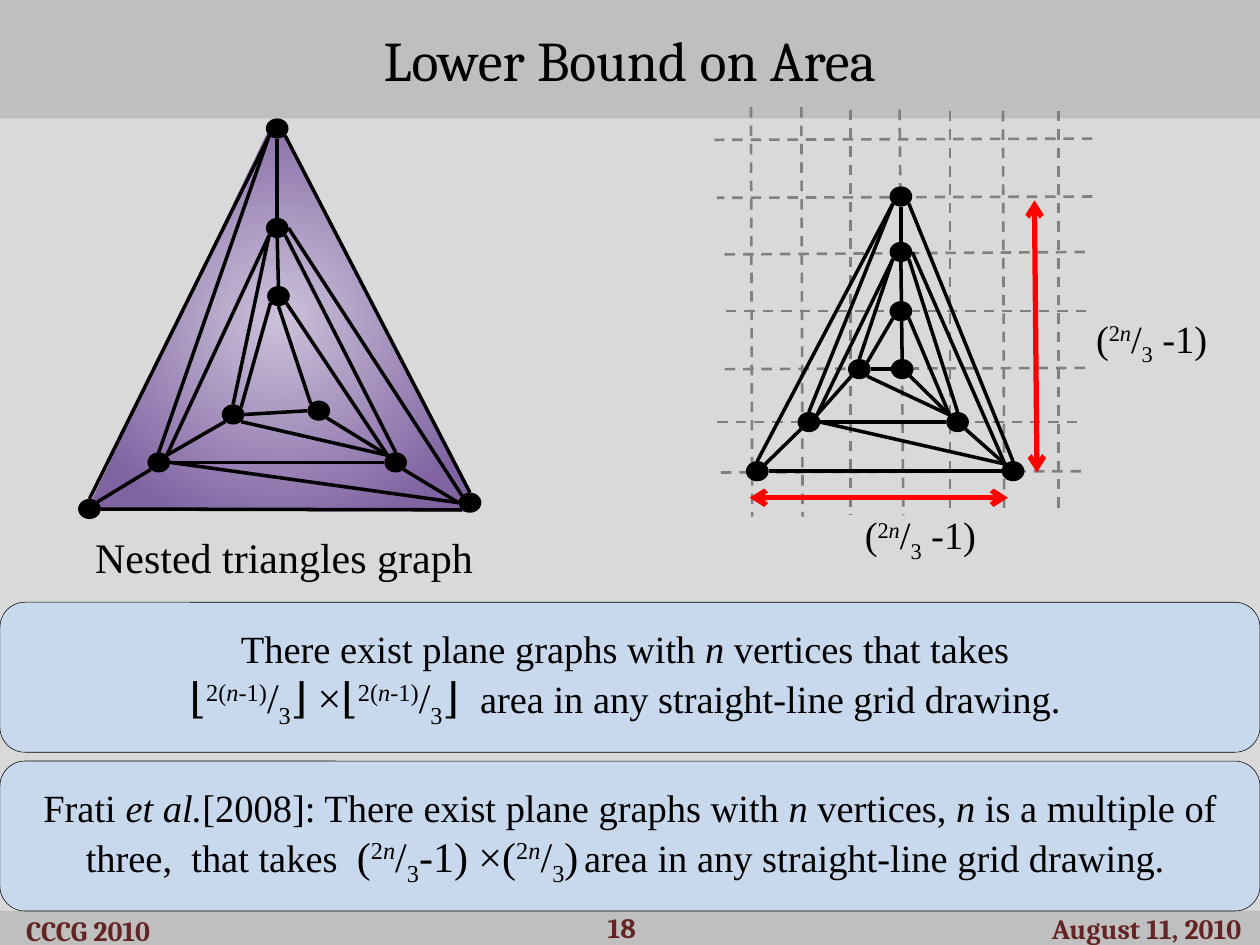
from math import cos, radians, sin
from typing import NamedTuple

from lxml import etree
from pptx import Presentation
from pptx.dml.color import RGBColor
from pptx.enum.dml import MSO_LINE as Dash
from pptx.enum.shapes import MSO_CONNECTOR as Connector, MSO_SHAPE as Preset
from pptx.enum.text import MSO_ANCHOR as Anchor, PP_ALIGN as Align
from pptx.oxml.ns import qn
from pptx.util import Inches, Pt

BLACK = RGBColor(0x00, 0x00, 0x00)
BACKDROP = RGBColor(0xD9, 0xD9, 0xD9)
BAND = RGBColor(0xBF, 0xBF, 0xBF)
GRID_GRAY = RGBColor(0x80, 0x80, 0x80)
RED = RGBColor(0xFF, 0x00, 0x00)
MAROON = RGBColor(0x63, 0x25, 0x23)
PALE_BLUE = RGBColor(0xC6, 0xD9, 0xF1)
LILAC = RGBColor(0xCC, 0xC1, 0xDA)
PURPLE = RGBColor(0x80, 0x64, 0xA2)
HEADING, BODY = "Cambria", "Times New Roman"

NODE_WIDTH, NODE_HEIGHT = 0.18, 0.16
SITE_ANGLES = {"R": 0, "BR": 45, "B": 90, "BL": 135,
               "L": 180, "TL": 225, "T": 270, "TR": 315}
SHARED_EDGES = """E.BL-B.TR B.T-A.BL C.T-A.BR A.BL-E.T D.BL-E.TR A.B-D.T
    D.R-C.TL D.BR-F.T E.R-F.L H.BL-E.TR F.TL-H.BR D.BL-H.T G.BL-H.TR
    G.BR-F.TL H.R-I.L I.BR-F.TL"""
NESTED_EDGES = "B.R-C.BL E.R-C.L C.L-F.BR D.B-G.T G.B-I.TL"
GRID_EDGES = "B.R-C.L E.R-C.TL C.TL-F.BR D.B-I.T"
NESTED_NODES = {
    "A": (1.58, 0.08), "B": (0.09, 3.1), "C": (3.11, 3.05),
    "D": (1.58, 0.87), "E": (0.64, 2.73), "F": (2.52, 2.73),
    "G": (1.59, 1.41), "H": (1.23, 2.35), "I": (1.91, 2.32)}
GRID_NODES = {
    "A": (1.49, 0.71), "B": (0.35, 2.89), "C": (2.38, 2.89),
    "D": (1.49, 1.15), "E": (0.76, 2.5), "F": (1.94, 2.5),
    "G": (1.49, 1.62), "H": (1.16, 2.08), "I": (1.5, 2.08)}
NESTED_OUTLINE = [(0.07, 3.11), (1.52, 0.08), (1.61, 0.04), (1.63, 0.12),
                  (3.14, 3.03), (3.13, 3.09), (3.1, 3.12)]
GRID_COLUMNS = [(0.3, 0.31, 0, 3.25), (0.7, 0.71, 0, 3.25),
                (1.09, 1.09, 0.02, 3.24), (1.48, 1.51, 0.02, 3.24),
                (1.88, 1.88, 0.03, 3.2), (2.3, 2.31, 0.03, 3.22),
                (2.74, 2.74, 0.03, 3.2)]
GRID_ROWS = [(3.01, 0.01, 0.25, 0.26), (3.01, 0.03, 0.71, 0.72),
             (2.95, 0.05, 1.15, 1.17), (2.96, 0.07, 1.62, 1.62),
             (2.95, 0.04, 2.07, 2.08), (2.89, 0, 2.5, 2.5),
             (2.92, 0, 2.89, 2.9)]

TWO_N_THIRDS = [("2", "^"), ("n", "^i"), ("/", ""), ("3", "_")]
TWO_N_LESS_THIRDS = [("2(", "^"), ("n", "^i"), ("-1)", "^"), ("/", ""), ("3", "_")]
SIDE_LENGTH = [("(", ""), *TWO_N_THIRDS, (" -1)", "")]
FLOOR_AREA = [("⌊", ""), *TWO_N_LESS_THIRDS, ("⌋ ×⌊", ""),
              *TWO_N_LESS_THIRDS, ("⌋  ", "")]
FRATI_AREA = [("(", ""), *TWO_N_THIRDS, ("-1) ×(", ""), *TWO_N_THIRDS, (")", "")]
CLOSING = ("area in any straight-line grid drawing. ", "")


class Box(NamedTuple):
    """Region of the slide, in inches."""
    left: float
    top: float
    width: float
    height: float

    def point(self, x, y):
        """Return the slide position of an offset inside the region."""
        return Inches(self.left + x), Inches(self.top + y)

    def inner(self, x, y, width, height):
        """Return a smaller region at an offset inside this one."""
        return Box(self.left + x, self.top + y, width, height)

    def lengths(self):
        """Return left, top, width and height as lengths."""
        return [Inches(value) for value in self]


def enlarged(runs, size=24):
    """Give every run of a formula its own size."""
    return [(text, marks, size) for text, marks in runs]


def write(frame, paragraphs, size=22, font=BODY, color=BLACK, bold=False):
    """Fill a text frame with centred paragraphs of marked runs."""
    frame.word_wrap = True
    frame.vertical_anchor = Anchor.MIDDLE
    for number, runs in enumerate(paragraphs):
        paragraph = frame.add_paragraph() if number else frame.paragraphs[0]
        paragraph.alignment = Align.CENTER
        for text, marks, *own_size in runs:
            run = paragraph.add_run()
            run.text = text
            run.font.name, run.font.bold = font, bold
            run.font.size = Pt(own_size[0] if own_size else size)
            run.font.color.rgb = color
            run.font.italic = "i" in marks
            if "^" in marks or "_" in marks:
                baseline = "30000" if "^" in marks else "-25000"
                run._r.get_or_add_rPr().set("baseline", baseline)


def add_label(shapes, box, runs, **style):
    """Place a plain text label."""
    write(shapes.add_textbox(*box.lengths()).text_frame, [runs], **style)


def add_filled(shapes, preset, box, color):
    """Place a flat preset shape without outline."""
    shape = shapes.add_shape(preset, *box.lengths())
    shape.shadow.inherit = False
    shape.fill.solid()
    shape.fill.fore_color.rgb = color
    shape.line.fill.background()
    return shape


def add_line(shapes, start, end, color=BLACK, width=2, dash=None, arrows=False):
    """Draw a straight connector, dashed or double-headed on request."""
    line = shapes.add_connector(Connector.STRAIGHT, *start, *end)
    line.line.color.rgb = color
    line.line.width = Pt(width)
    if dash:
        line.line.dash_style = dash
    properties = line._element.spPr
    if arrows:
        for end_tag in ("a:headEnd", "a:tailEnd"):
            etree.SubElement(properties.find(qn("a:ln")), qn(end_tag), type="arrow")
    etree.SubElement(properties, qn("a:effectLst"))


def add_graph(shapes, box, nodes, edges):
    """Draw vertices and the edges that join sites on their rims."""
    for x, y in nodes.values():
        node = box.inner(x - NODE_WIDTH / 2, y - NODE_HEIGHT / 2, NODE_WIDTH, NODE_HEIGHT)
        add_filled(shapes, Preset.OVAL, node, BLACK)

    def rim(site):
        name, side = site.split(".")
        x, y = nodes[name]
        angle = radians(SITE_ANGLES[side])
        return box.point(x + NODE_WIDTH / 2 * cos(angle), y + NODE_HEIGHT / 2 * sin(angle))

    for edge in edges.split():
        start, end = edge.split("-")
        add_line(shapes, rim(start), rim(end))


def add_nested_triangles(slide, box):
    """Draw the shaded nested triangles graph."""
    shapes = slide.shapes.add_group_shape().shapes
    first, *others = [box.point(x, y) for x, y in NESTED_OUTLINE]
    builder = shapes.build_freeform(*first)
    builder.add_line_segments(others, close=True)
    outline = builder.convert_to_shape()
    outline.shadow.inherit = False
    outline.line.fill.background()
    outline.fill.gradient()
    for stop, color, position in zip(outline.fill.gradient_stops, (LILAC, PURPLE), (0, 0.82)):
        stop.color.rgb, stop.position = color, position
    gradient = outline._element.spPr.find(qn("a:gradFill"))
    gradient.remove(gradient.find(qn("a:lin")))
    radial = etree.SubElement(gradient, qn("a:path"), path="circle")
    etree.SubElement(radial, qn("a:fillToRect"), l="50000", t="50000", r="50000", b="50000")
    add_graph(shapes, box, NESTED_NODES, SHARED_EDGES + " " + NESTED_EDGES)


def add_grid_drawing(slide, box):
    """Draw the graph on a dashed grid with its two side lengths."""
    shapes = slide.shapes.add_group_shape().shapes
    for x1, x2, y1, y2 in GRID_COLUMNS + GRID_ROWS:
        add_line(shapes, box.point(x1, y1), box.point(x2, y2), GRID_GRAY, 1.5, Dash.DASH)
    add_label(shapes, box.inner(0.57, 3.07, 2.15, 0.69), SIDE_LENGTH)
    add_label(shapes, box.inner(2.59, 1.56, 1.78, 0.59), SIDE_LENGTH)
    add_graph(shapes, box, GRID_NODES, SHARED_EDGES + " " + GRID_EDGES)
    for start, end in (((0.29, 3.1), (2.34, 3.1)), ((2.55, 0.74), (2.57, 2.9))):
        add_line(shapes, box.point(*start), box.point(*end), RED, 3, arrows=True)


def add_statement(slide, box, paragraphs):
    """Place a translucent rounded panel with a theorem."""
    panel = add_filled(slide.shapes, Preset.ROUNDED_RECTANGLE, box, PALE_BLUE)
    tint = panel._element.spPr.find(qn("a:solidFill"))[0]
    etree.SubElement(tint, qn("a:alpha"), val="84000")
    panel.line.color.rgb = BLACK
    panel.line.width = Pt(0.3)
    write(panel.text_frame, paragraphs)


def add_title(slide, box):
    """Turn the title placeholder into the top band."""
    title = slide.shapes.title
    title.left, title.top, title.width, title.height = box.lengths()
    title.fill.solid()
    title.fill.fore_color.rgb = BAND
    write(title.text_frame, [[("Lower Bound on Area", "")]], 32, HEADING)


def add_footer(slide, box):
    """Draw the bottom band with event, page number and date."""
    shapes = slide.shapes.add_group_shape().shapes
    add_filled(shapes, Preset.RECTANGLE, box, BAND)
    for text, spot in (("CCCG 2010", (-0.33, -0.02, 2.06, 0.35)),
                       ("August 11, 2010", (7.95, -0.04, 2.3, 0.35)),
                       ("18", (4.06, -0.01, 1.75, 0.28))):
        add_label(shapes, box.inner(*spot), [(text, "")],
                  size=16, font=HEADING, color=MAROON, bold=True)


def main():
    """Build and save the slide."""
    deck = Presentation()
    deck.slide_width, deck.slide_height = Inches(10), Inches(7.5)
    slide = deck.slides.add_slide(deck.slide_layouts[5])
    slide.background.fill.solid()
    slide.background.fill.fore_color.rgb = BACKDROP
    add_title(slide, Box(0, 0, 10, 0.94))
    add_nested_triangles(slide, Box(0.62, 0.94, 3.2, 3.18))
    add_grid_drawing(slide, Box(5.66, 0.85, 4.37, 3.76))
    add_footer(slide, Box(0, 7.23, 10, 0.27))
    add_statement(slide, Box(0, 4.78, 10, 1.19), [
        [("There exist plane graphs with ", ""), ("n", "i"), (" vertices that takes ", "")],
        [*enlarged(FLOOR_AREA), CLOSING]])
    add_label(slide.shapes, Box(0.09, 4.06, 4.33, 0.71), [("Nested triangles graph", "")], size=24)
    add_statement(slide, Box(0, 6.04, 10, 1.19), [
        [("Frati ", ""), ("et al.", "i"), ("[2008]: There exist plane graphs with ", ""),
         ("n", "i"), (" vertices, ", ""), ("n", "i"),
         (" is a multiple of three,  that takes  ", ""),
         *enlarged(FRATI_AREA), (" ", "_"), CLOSING]])
    deck.save("out.pptx")


if __name__ == "__main__":
    main()
